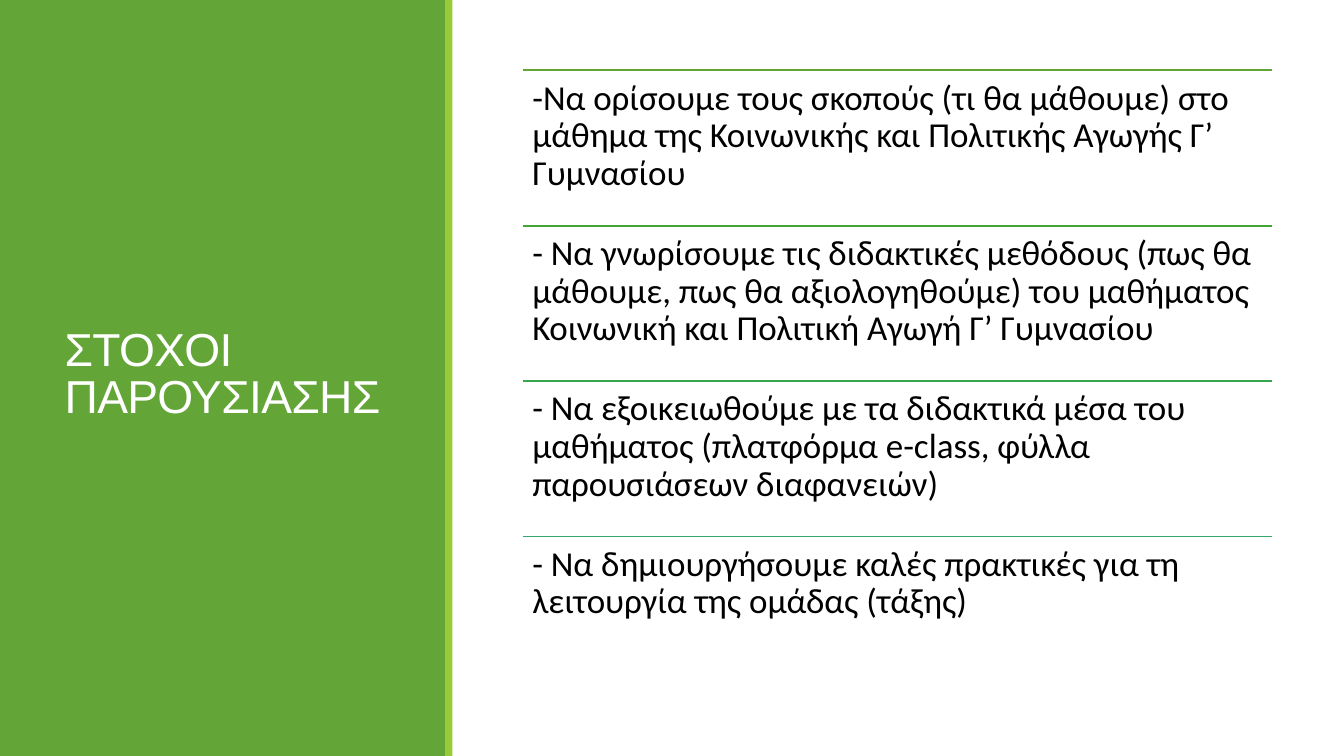
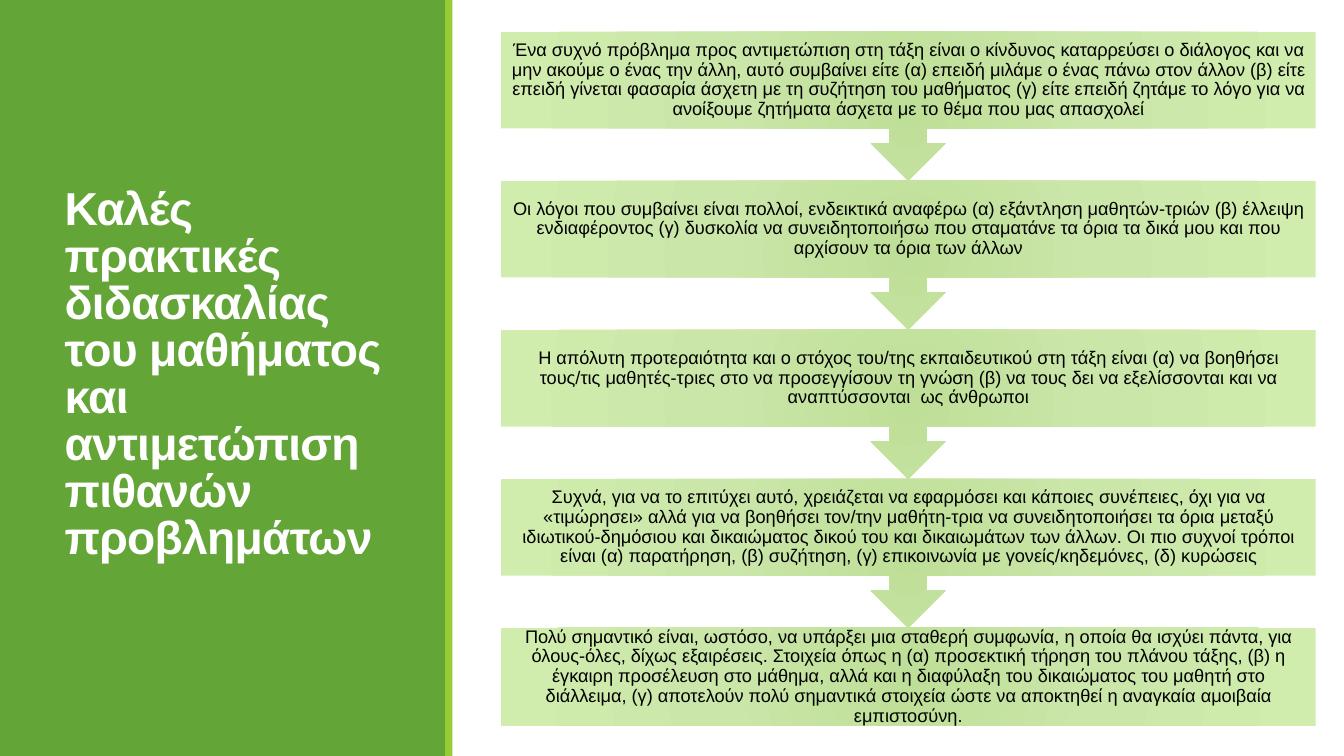
"""Build two slides with a green title panel: a ruled list of aims and a chain of callouts."""
from dataclasses import dataclass

from lxml.etree import SubElement
from pptx import Presentation
from pptx.dml.color import RGBColor
from pptx.enum.shapes import MSO_CONNECTOR, MSO_SHAPE
from pptx.enum.text import MSO_ANCHOR, MSO_AUTO_SIZE, PP_ALIGN
from pptx.oxml.ns import qn
from pptx.util import Emu, Pt

SCALE = 9525
PAGE_WIDTH, PAGE_HEIGHT = 1280, 720
TITLE_ONLY = 5
INSET = 9


@dataclass(frozen=True)
class Theme:
    """Colours, fonts and type sizes of the deck."""
    panel: str = "63A537"
    accent: str = "99CB38"
    title_text: str = "FFFFFF"
    body_text: str = "000000"
    rules: tuple = ("63A537", "42A637", "37A64D", "37A76F")
    gradient: tuple = ((0, "BEDF97"), (45, "CAE6A9"), (100, "D0EDAE"))
    title_font: str = "Arial"
    list_font: str = "Calibri"
    title_size: int = 33
    list_size: int = 25
    step_size: int = 13
    rule_width: float = 1.25
    title_spacing: float = 0.85
    body_spacing: float = 0.9


THEME = Theme()

AIMS = (
    "-Να ορίσουμε τους σκοπούς (τι θα μάθουμε) στο μάθημα της Κοινωνικής και Πολιτικής "
    "Αγωγής Γ’ Γυμνασίου",
    "- Να γνωρίσουμε τις διδακτικές μεθόδους (πως θα μάθουμε, πως θα αξιολογηθούμε) του "
    "μαθήματος Κοινωνική και Πολιτική Αγωγή Γ’ Γυμνασίου",
    "- Να εξοικειωθούμε με τα διδακτικά μέσα του μαθήματος (πλατφόρμα e-class, φύλλα "
    "παρουσιάσεων διαφανειών)",
    "- Να δημιουργήσουμε καλές πρακτικές για τη λειτουργία της ομάδας (τάξης)",
)

STEPS = (
    "Ένα συχνό πρόβλημα προς αντιμετώπιση στη τάξη είναι ο κίνδυνος καταρρεύσει ο διάλογος "
    "και να μην ακούμε ο ένας την άλλη, αυτό συμβαίνει είτε (α) επειδή μιλάμε ο ένας πάνω "
    "στον άλλον (β) είτε επειδή γίνεται φασαρία άσχετη με τη συζήτηση του μαθήματος (γ) είτε "
    "επειδή ζητάμε το λόγο για να ανοίξουμε ζητήματα άσχετα με το θέμα που μας απασχολεί",
    "Οι λόγοι που συμβαίνει είναι πολλοί, ενδεικτικά αναφέρω (α) εξάντληση μαθητών-τριών "
    "(β) έλλειψη ενδιαφέροντος (γ) δυσκολία να συνειδητοποιήσω που σταματάνε τα όρια τα δικά "
    "μου και που αρχίσουν τα όρια των άλλων",
    "Η απόλυτη προτεραιότητα και ο στόχος του/της εκπαιδευτικού στη τάξη είναι (α) να "
    "βοηθήσει τους/τις μαθητές-τριες στο να προσεγγίσουν τη γνώση (β) να τους δει να "
    "εξελίσσονται και να αναπτύσσονται  ως άνθρωποι",
    "Συχνά, για να το επιτύχει αυτό, χρειάζεται να εφαρμόσει και κάποιες συνέπειες, όχι για "
    "να «τιμώρησει» αλλά για να βοηθήσει τον/την μαθήτη-τρια να συνειδητοποιήσει τα όρια "
    "μεταξύ ιδιωτικού-δημόσιου και δικαιώματος δικού του και δικαιωμάτων των άλλων. Οι πιο "
    "συχνοί τρόποι είναι (α) παρατήρηση, (β) συζήτηση, (γ) επικοινωνία με γονείς/κηδεμόνες, "
    "(δ) κυρώσεις",
    "Πολύ σημαντικό είναι, ωστόσο, να υπάρξει μια σταθερή συμφωνία, η οποία θα ισχύει πάντα, "
    "για όλους-όλες, δίχως εξαιρέσεις. Στοιχεία όπως η (α) προσεκτική τήρηση του πλάνου "
    "τάξης, (β) η έγκαιρη προσέλευση στο μάθημα, αλλά και η διαφύλαξη του δικαιώματος του "
    "μαθητή στο διάλλειμα, (γ) αποτελούν πολύ σημαντικά στοιχεία ώστε να αποκτηθεί η "
    "αναγκαία αμοιβαία εμπιστοσύνη.",
)


def px(*lengths):
    """Turn px lengths into EMU."""
    return [Emu(length * SCALE) for length in lengths]


def write(frame, text, font, size, color, spacing, align=PP_ALIGN.LEFT, anchor=MSO_ANCHOR.TOP):
    """Fill a text frame with one formatted paragraph and return its run."""
    frame.word_wrap = True
    frame.auto_size = MSO_AUTO_SIZE.NONE
    frame.vertical_anchor = anchor
    para = frame.paragraphs[0]
    para.alignment = align
    para.line_spacing = spacing
    span = para.add_run()
    span.text = text
    span.font.name = font
    span.font.size = Pt(size)
    span.font.color.rgb = RGBColor.from_string(color)
    return span


def set_insets(frame):
    """Give a text frame equal margins on all sides."""
    frame.margin_left, frame.margin_top, frame.margin_right, frame.margin_bottom = px(*[INSET] * 4)


def add_plain_shape(page, kind, left, top, width, height):
    """Add a preset shape without outline or shadow."""
    shape = page.shapes.add_shape(kind, *px(left, top, width, height))
    shape.line.fill.background()
    shape.shadow.inherit = False
    return shape


def add_page(deck, text, bold=False):
    """Add a page with the green panel, its accent strip and the title."""
    page = deck.slides.add_slide(deck.slide_layouts[TITLE_ONLY])
    title = page.shapes.title
    for left, width, color in ((0, 425, THEME.panel), (424, 7, THEME.accent)):
        band = add_plain_shape(page, MSO_SHAPE.RECTANGLE, left, 0, width, PAGE_HEIGHT)
        band.fill.solid()
        band.fill.fore_color.rgb = RGBColor.from_string(color)
        title.element.addprevious(band.element)
    title.left, title.top, title.width, title.height = px(52, 58, 324, 600)
    span = write(title.text_frame, text, THEME.title_font, THEME.title_size, THEME.title_text,
                 THEME.title_spacing, anchor=MSO_ANCHOR.MIDDLE)
    span.font.bold = bold
    span.font._element.set("spc", "-50")
    return page


def add_ruled_item(page, text, color, left, top, width, height):
    """Add a list item below a coloured rule."""
    rule = page.shapes.add_connector(MSO_CONNECTOR.STRAIGHT, *px(left, top, left + width, top))
    rule.line.color.rgb = RGBColor.from_string(color)
    rule.line.width = Pt(THEME.rule_width)
    SubElement(rule.element.spPr, qn("a:effectLst"))
    box = page.shapes.add_textbox(*px(left, top, width, height))
    set_insets(box.text_frame)
    write(box.text_frame, text, THEME.list_font, THEME.list_size, THEME.body_text,
          THEME.body_spacing)


def fill_radial(shape):
    """Fill a shape with the circular gradient of the theme."""
    shape.fill.gradient()
    gradient = shape.element.spPr.find(qn("a:gradFill"))
    for child in list(gradient):
        gradient.remove(child)
    stops = SubElement(gradient, qn("a:gsLst"))
    for percent, color in THEME.gradient:
        stop = SubElement(stops, qn("a:gs"), pos=str(percent * 1000))
        SubElement(stop, qn("a:srgbClr"), val=color)
    circle = SubElement(gradient, qn("a:path"), path="circle")
    SubElement(circle, qn("a:fillToRect"), dict.fromkeys("ltrb", "100000"))


def add_step(page, text, kind, left, top, width, height):
    """Add one step of the chain with its centred text."""
    box = add_plain_shape(page, kind, left, top, width, height)
    fill_radial(box)
    set_insets(box.text_frame)
    write(box.text_frame, text, THEME.title_font, THEME.step_size, THEME.body_text,
          THEME.body_spacing, PP_ALIGN.CENTER, MSO_ANCHOR.MIDDLE)


def add_aims(page):
    """Stack the aims at an equal pitch."""
    pitch = 148
    for index, (text, color) in enumerate(zip(AIMS, THEME.rules)):
        add_ruled_item(page, text, color, 498, 67 + index * pitch, 713, pitch)


def add_chain(page):
    """Stack the steps so that each arrow touches the next box."""
    pitch, last_height = 142, 93
    last = len(STEPS) - 1
    for index, text in enumerate(STEPS):
        kind, height = MSO_SHAPE.DOWN_ARROW_CALLOUT, pitch
        if index == last:
            kind, height = MSO_SHAPE.RECTANGLE, last_height
        add_step(page, text, kind, 477, 30 + index * pitch, 776, height)


def main():
    """Build and save the deck."""
    deck = Presentation()
    deck.slide_width, deck.slide_height = px(PAGE_WIDTH, PAGE_HEIGHT)
    add_aims(add_page(deck, "ΣΤΟΧΟΙ ΠΑΡΟΥΣΙΑΣΗΣ"))
    add_chain(add_page(deck, "Καλές πρακτικές διδασκαλίας του μαθήματος και αντιμετώπιση "
                             "πιθανών προβλημάτων", bold=True))
    deck.save("out.pptx")


if __name__ == "__main__":
    main()
